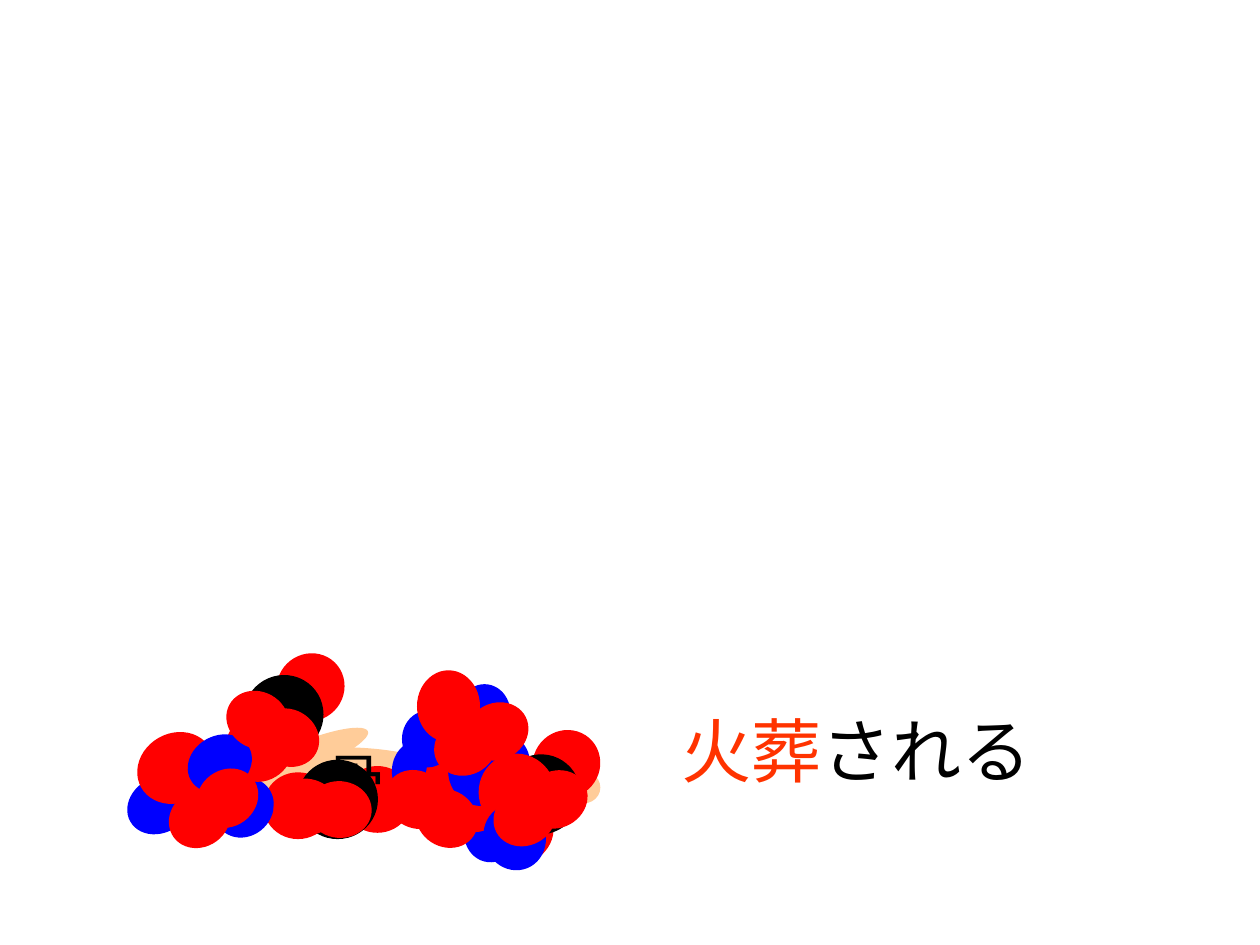
from dataclasses import dataclass

from lxml.etree import SubElement
from pptx import Presentation
from pptx.dml.color import RGBColor
from pptx.enum.shapes import MSO_SHAPE
from pptx.enum.text import MSO_ANCHOR, MSO_AUTO_SIZE, PP_ALIGN
from pptx.oxml.ns import qn
from pptx.slide import Slide
from pptx.text.text import _Run as Run
from pptx.util import Emu, Pt

EMU_PER_PX = 9144


@dataclass(frozen=True)
class Theme:
    skin: RGBColor = RGBColor(0xFF, 0xCC, 0x99)
    red: RGBColor = RGBColor(0xFF, 0, 0)
    blue: RGBColor = RGBColor(0, 0, 0xFF)
    black: RGBColor = RGBColor(0, 0, 0)
    accent: RGBColor = RGBColor(0xFF, 0x33, 0)
    caption_font: str = "Arial"
    bone_font: str = "Noto Sans CJK JP"
    caption_size: Pt = Pt(40)
    bone_size: Pt = Pt(36)
    outline: Pt = Pt(0.75)


THEME = Theme()


@dataclass(frozen=True)
class Ball:
    width: int
    height: int
    color: RGBColor


@dataclass(frozen=True)
class Oval:
    left: int
    top: int
    ball: Ball
    rotation: float


@dataclass(frozen=True)
class Cluster:
    rotation: float
    balls: tuple[Ball, ...]
    positions: tuple[tuple[int, int], ...]

    def ovals(self) -> list[Oval]:
        return [Oval(left, top, ball, self.rotation)
                for ball, (left, top) in zip(self.balls, self.positions)]


def blue(width: int, height: int) -> Ball:
    return Ball(width, height, THEME.blue)


def red(width: int, height: int) -> Ball:
    return Ball(width, height, THEME.red)


def skin(width: int, height: int) -> Ball:
    return Ball(width, height, THEME.skin)


BLACK_CENTRED = (red(55, 53), red(55, 53), Ball(64, 63, THEME.black))
RED_ON_TOP = (blue(45, 50), blue(45, 50), red(54, 63))
SMALL_RED_ON_TOP = (blue(41, 45), blue(41, 45), red(50, 57))
RED_PAIR = (red(51, 45), red(51, 45))

BODY = [
    Oval(244, 529, skin(50, 178), 270),
    Oval(376, 550, skin(30, 145), 275.3),
    Oval(120, 584, skin(60, 72), 270),
    Oval(233, 548, skin(23, 102), 68.7),
    Oval(451, 612, skin(25, 26), 270),
]

BACK_CLUSTERS = [
    Cluster(0, BLACK_CENTRED, ((209, 613), (272, 608), (236, 603))),
    Cluster(284.6, (blue(49, 44), red(58, 55), blue(49, 44)),
            ((366, 638), (348, 604), (374, 585))),
    Cluster(45.4, RED_ON_TOP, ((120, 596), (171, 616), (148, 583))),
    Cluster(180, RED_ON_TOP, ((360, 564), (311, 587), (338, 585))),
    Cluster(310.6, BLACK_CENTRED, ((385, 632), (422, 580), (397, 599))),
    Cluster(314.6, BLACK_CENTRED, ((178, 567), (219, 519), (193, 536))),
    Cluster(330.4, (blue(53, 44), red(63, 55), blue(53, 44)),
            ((100, 617), (108, 582), (148, 584))),
    Cluster(67.3, (blue(53, 49), red(63, 61), blue(53, 49)),
            ((354, 589), (379, 599), (382, 640))),
    Cluster(0, SMALL_RED_ON_TOP, ((319, 564), (364, 543), (331, 532))),
]

FRONT_CLUSTERS = [
    Cluster(323.8, RED_PAIR, ((133, 627), (155, 611))),
    Cluster(4.7, RED_PAIR, ((217, 618), (244, 620))),
    Cluster(32.9, RED_PAIR, ((305, 612), (329, 627))),
    Cluster(331.5, RED_PAIR, ((391, 626), (416, 612))),
    Cluster(28.9, RED_PAIR, ((179, 549), (203, 563))),
    Cluster(332.9, RED_PAIR, ((344, 570), (369, 558))),
]


def px(length: int) -> Emu:
    return Emu(length * EMU_PER_PX)


def draw_group(slide: Slide, ovals: list[Oval]) -> None:
    group = slide.shapes.add_group_shape()
    for oval in ovals:
        shape = group.shapes.add_shape(
            MSO_SHAPE.OVAL, px(oval.left), px(oval.top),
            px(oval.ball.width), px(oval.ball.height))
        shape.rotation = oval.rotation
        shape.shadow.inherit = False
        shape.fill.solid()
        shape.fill.fore_color.rgb = oval.ball.color
        shape.line.fill.background()


def format_run(run: Run, font: str, size: Pt, color: RGBColor) -> None:
    run.font.name = font
    run.font.size = size
    run.font.color.rgb = color
    SubElement(run.font._element, qn("a:ea"), typeface=font)


def draw_caption(slide: Slide) -> None:
    shape = slide.shapes.add_textbox(px(531), px(556), px(323), px(77))
    text_frame = shape.text_frame
    text_frame.word_wrap = True
    text_frame.auto_size = MSO_AUTO_SIZE.SHAPE_TO_FIT_TEXT
    text_frame.vertical_anchor = MSO_ANCHOR.MIDDLE
    paragraph = text_frame.paragraphs[0]
    for text, color in (("火葬", THEME.accent), ("される", THEME.black)):
        run = paragraph.add_run()
        run.text = text
        format_run(run, THEME.caption_font, THEME.caption_size, color)


def draw_bone_label(slide: Slide) -> None:
    shape = slide.shapes.add_textbox(px(256), px(595), px(50), px(50))
    text_frame = shape.text_frame
    text_frame.text = "骨"
    text_frame.word_wrap = False
    text_frame.vertical_anchor = MSO_ANCHOR.MIDDLE
    text_frame.margin_left = text_frame.margin_right = 0
    text_frame.margin_top = text_frame.margin_bottom = 0
    paragraph = text_frame.paragraphs[0]
    paragraph.alignment = PP_ALIGN.CENTER
    run = paragraph.runs[0]
    format_run(run, THEME.bone_font, THEME.bone_size, THEME.black)
    properties = run.font._element
    outline = SubElement(properties, qn("a:ln"), w=str(int(THEME.outline)))
    fill = SubElement(outline, qn("a:solidFill"))
    SubElement(fill, qn("a:srgbClr"), val=str(THEME.black))
    properties.insert(0, outline)


def main() -> None:
    presentation = Presentation()
    presentation.slide_width = px(1000)
    presentation.slide_height = px(750)
    slide = presentation.slides.add_slide(presentation.slide_layouts[6])
    draw_group(slide, BODY)
    draw_caption(slide)
    for cluster in BACK_CLUSTERS:
        draw_group(slide, cluster.ovals())
    draw_bone_label(slide)
    for cluster in FRONT_CLUSTERS:
        draw_group(slide, cluster.ovals())
    presentation.save("out.pptx")


if __name__ == "__main__":
    main()
